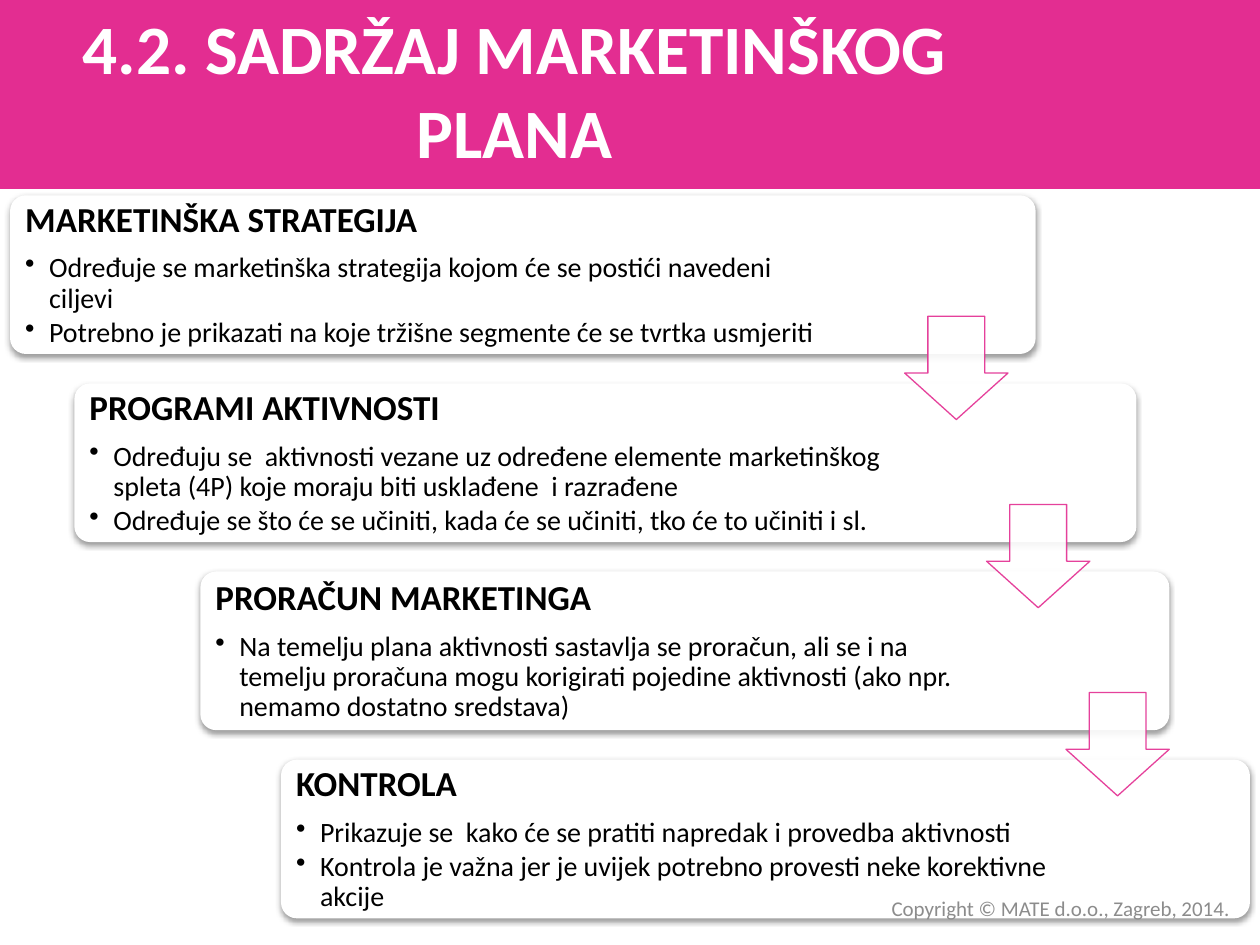
from dataclasses import dataclass

from lxml.etree import SubElement
from pptx import Presentation
from pptx.dml.color import RGBColor
from pptx.enum.shapes import MSO_SHAPE
from pptx.enum.text import MSO_ANCHOR, MSO_AUTO_SIZE, PP_ALIGN
from pptx.oxml.ns import qn
from pptx.util import Inches, Pt


@dataclass(frozen=True)
class Theme:
    font: str = "Calibri"
    accent: str = "E32D91"
    light: str = "FFFFFF"
    ink: str = "000000"
    muted: str = "8C8C8C"
    title_size: float = 39.6
    heading_size: float = 20
    body_size: float = 16
    footer_size: float = 12


THEME = Theme()
TITLE = "4.2. SADRŽAJ MARKETINŠKOG PLANA"
COPYRIGHT = "Copyright © MATE d.o.o., Zagreb, 2014."
FIRST_TOP, STEP_PITCH, CARD_HEIGHT = 1.55, 1.493, 1.26
ARROW_SIZE, ARROW_OFFSET = 0.82, 0.96

# Card left, card width, text width, heading, bullets
STEPS = [
    (0.08, 8.14, 6.59, "MARKETINŠKA STRATEGIJA", [
        "Određuje se marketinška strategija kojom će se postići navedeni ciljevi",
        "Potrebno je prikazati na koje tržišne segmente će se tvrtka usmjeriti"]),
    (0.59, 8.43, 6.75, "PROGRAMI AKTIVNOSTI", [
        "Određuju se  aktivnosti vezane uz određene elemente marketinškog "
        "spleta (4P) koje moraju biti usklađene  i razrađene",
        "Određuje se što će se učiniti, kada će se učiniti, tko će to učiniti i sl."]),
    (1.59, 7.69, 6.16, "PRORAČUN MARKETINGA", [
        "Na temelju plana aktivnosti sastavlja se proračun, ali se i na temelju "
        "proračuna mogu korigirati pojedine aktivnosti (ako npr. nemamo dostatno "
        "sredstava)"]),
    (2.23, 7.69, 6.15, "KONTROLA", [
        "Prikazuje se  kako će se pratiti napredak i provedba aktivnosti",
        "Kontrola je važna jer je uvijek potrebno provesti neke korektivne akcije"]),
]
ARROW_LEFTS = [7.18, 7.83, 8.46]


def set_alpha(fill_element, percent):
    color = fill_element.find(".//" + qn("a:srgbClr"))
    SubElement(color, qn("a:alpha"), val=str(percent * 1000))


def add_soft_shadow(shape):
    """Put a short shadow straight below the shape."""
    effects = shape.element.spPr.find(qn("a:effectLst"))
    shadow = SubElement(effects, qn("a:outerShdw"), blurRad=str(Pt(3.1)),
                        dist=str(Pt(1.6)), dir="5400000", rotWithShape="0")
    color = SubElement(shadow, qn("a:srgbClr"), val=THEME.ink)
    SubElement(color, qn("a:alpha"), val="38000")


def write_paragraph(paragraph, text, *, size, color, bold=False, align=PP_ALIGN.LEFT,
                    line_spacing=1.0, space_after=0, bullet=False):
    paragraph.alignment = align
    paragraph.line_spacing = line_spacing
    paragraph.space_before = Pt(0)
    paragraph.space_after = Pt(space_after)
    if bullet:
        properties = paragraph._p.get_or_add_pPr()
        properties.set("marL", str(Inches(0.19)))
        properties.set("indent", str(Inches(-0.19)))
        SubElement(properties, qn("a:buChar"), char="•")
    run = paragraph.add_run()
    run.text = text
    run.font.name = THEME.font
    run.font.size = Pt(size)
    run.font.bold = bold
    run.font.color.rgb = RGBColor.from_string(color)


class SlideBuilder:
    def __init__(self, slide, theme):
        self.slide = slide
        self.theme = theme

    def shape(self, kind, left, top, width, height, fill):
        shape = self.slide.shapes.add_shape(
            kind, Inches(left), Inches(top), Inches(width), Inches(height))
        shape.shadow.inherit = False
        shape.fill.solid()
        shape.fill.fore_color.rgb = RGBColor.from_string(fill)
        shape.line.fill.background()
        return shape

    def text_box(self, left, top, width, height):
        box = self.slide.shapes.add_textbox(
            Inches(left), Inches(top), Inches(width), Inches(height))
        frame = box.text_frame
        frame.word_wrap = True
        frame.vertical_anchor = MSO_ANCHOR.MIDDLE
        return frame

    def title(self, text):
        """Fill the title placeholder and lay the coloured band behind it."""
        title = self.slide.shapes.title
        title.left, title.top = Inches(0), Inches(0.08)
        title.width, title.height = Inches(8.17), Inches(1.25)
        frame = title.text_frame
        frame.auto_size = MSO_AUTO_SIZE.NONE
        frame.vertical_anchor = MSO_ANCHOR.MIDDLE
        write_paragraph(frame.paragraphs[0], text, size=self.theme.title_size,
                        color=self.theme.light, bold=True, align=PP_ALIGN.CENTER)
        band = self.shape(MSO_SHAPE.RECTANGLE, 0, 0, 10, 1.5, self.theme.accent)
        title.element.addprevious(band.element)

    def card(self, left, top, width, text_width, heading, bullets):
        card = self.shape(MSO_SHAPE.ROUNDED_RECTANGLE, left, top, width,
                          CARD_HEIGHT, self.theme.light)
        card.adjustments[0] = 0.1
        add_soft_shadow(card)
        frame = self.text_box(left + 0.04, top + 0.04, text_width, 1.19)
        frame.margin_left = frame.margin_right = Inches(0.08)
        frame.margin_top = frame.margin_bottom = Inches(0.08)
        write_paragraph(frame.paragraphs[0], heading, size=self.theme.heading_size,
                        color=self.theme.ink, bold=True, line_spacing=0.9, space_after=8)
        for bullet in bullets:
            write_paragraph(frame.add_paragraph(), bullet, size=self.theme.body_size,
                            color=self.theme.ink, line_spacing=0.9, space_after=2.4,
                            bullet=True)

    def arrow(self, left, top):
        arrow = self.shape(MSO_SHAPE.DOWN_ARROW, left, top, ARROW_SIZE, ARROW_SIZE,
                           self.theme.light)
        arrow.adjustments[0] = 0.55
        arrow.adjustments[1] = 0.45
        arrow.line.color.rgb = RGBColor.from_string(self.theme.accent)
        arrow.line.width = Pt(0.75)
        properties = arrow.element.spPr
        for tag in ("a:solidFill", "a:ln"):
            set_alpha(properties.find(qn(tag)), 90)

    def footer(self, text):
        frame = self.text_box(4.69, 7.06, 5.17, 0.3)
        write_paragraph(frame.paragraphs[0], text, size=self.theme.footer_size,
                        color=self.theme.muted, align=PP_ALIGN.RIGHT)


def main():
    presentation = Presentation()
    presentation.slide_width, presentation.slide_height = Inches(10), Inches(7.5)
    slide = presentation.slides.add_slide(presentation.slide_layouts[5])
    builder = SlideBuilder(slide, THEME)
    builder.title(TITLE)
    tops = [FIRST_TOP + index * STEP_PITCH for index in range(len(STEPS))]
    for top, (left, width, text_width, heading, bullets) in zip(tops, STEPS):
        builder.card(left, top, width, text_width, heading, bullets)
    for top, left in zip(tops, ARROW_LEFTS):
        builder.arrow(left, top + ARROW_OFFSET)
    builder.footer(COPYRIGHT)
    presentation.save("out.pptx")


if __name__ == "__main__":
    main()
